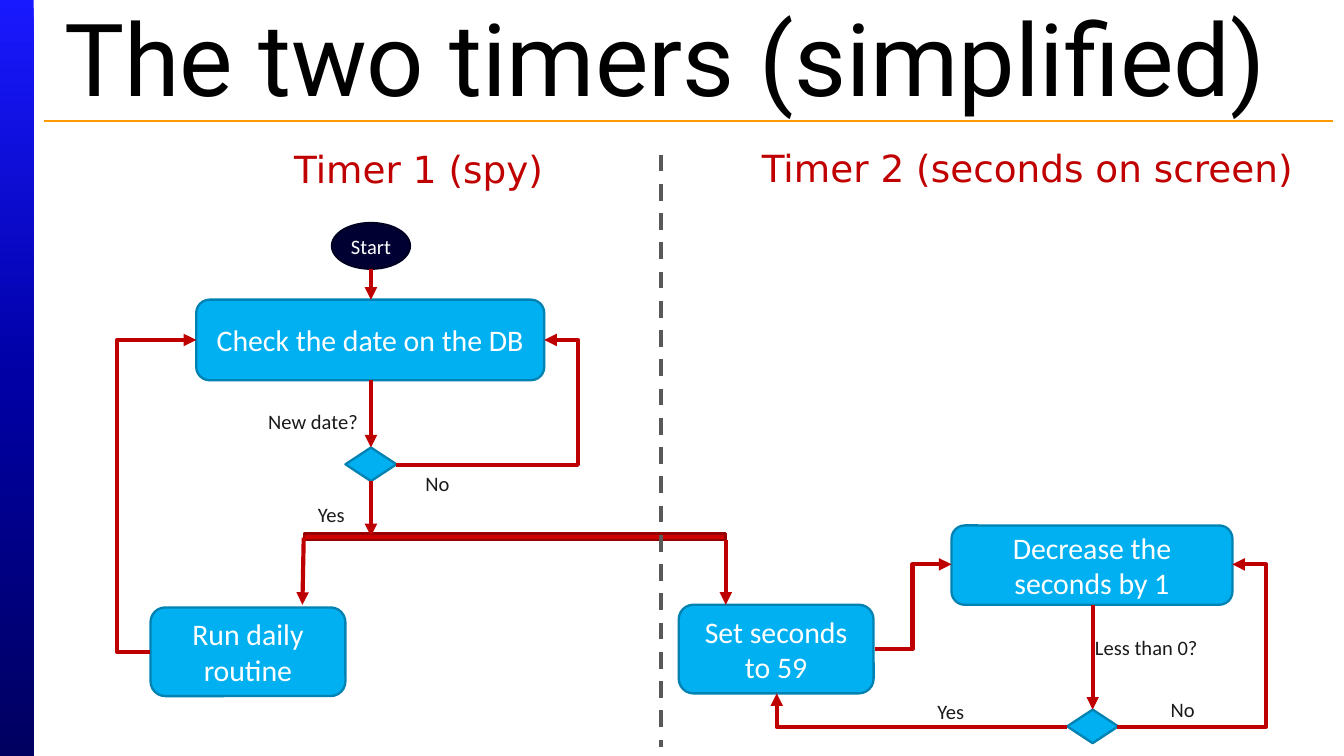
from dataclasses import dataclass
from typing import Optional

from lxml.etree import SubElement
from pptx import Presentation
from pptx.dml.color import RGBColor
from pptx.enum.dml import MSO_LINE
from pptx.enum.shapes import MSO_CONNECTOR, MSO_SHAPE
from pptx.enum.text import MSO_ANCHOR, PP_ALIGN
from pptx.oxml.ns import qn
from pptx.util import Inches, Pt

SLIDE_W = 10
SLIDE_H = SLIDE_W * 9 / 16


@dataclass(frozen=True)
class Theme:
    step_fill: str = "00B0F0"
    step_line: str = "0082B2"
    start_fill: str = "000032"
    start_line: str = "000025"
    bar_fill: str = "CC0000"
    bar_line: str = "970000"
    arrow: str = "BF0000"
    heading: str = "C00000"
    divider: str = "595959"
    rule: str = "FF9900"
    label: str = "1A1A1A"
    black: str = "000000"
    white: str = "FFFFFF"
    band: tuple = (("1919FF", 0), ("0000A5", 0.5), ("000060", 1))
    title_font: str = "Roboto"
    heading_font: str = "DejaVu Sans"
    body_font: str = "Calibri"
    title_size: float = 54
    heading_size: float = 20
    step_size: float = 16
    label_size: float = 11
    outline: float = 1.25
    stroke: float = 2.25


@dataclass(frozen=True)
class Box:
    x: float
    y: float
    w: float
    h: float

    @property
    def inches(self) -> tuple:
        return tuple(Inches(v) for v in (self.x, self.y, self.w, self.h))


@dataclass(frozen=True)
class Node:
    box: Box
    kind: MSO_SHAPE
    text: str = ""
    fill: str = Theme.step_fill
    line: str = Theme.step_line
    size: float = Theme.step_size
    inset: Optional[float] = None


@dataclass(frozen=True)
class Label:
    text: str
    box: Box
    filled: bool = True


@dataclass(frozen=True)
class Arrow:
    """Straight, bent through the column turn_x, or with a single corner."""
    start: tuple
    end: tuple
    turn_x: Optional[float] = None
    corner: bool = False


T = Theme()
STEP, CHOICE = MSO_SHAPE.ROUNDED_RECTANGLE, MSO_SHAPE.DIAMOND

NODES = [
    Node(Box(2.47, 1.66, 0.58, 0.34), MSO_SHAPE.OVAL, "Start",
         T.start_fill, T.start_line, T.label_size, 0),
    Node(Box(1.46, 2.23, 2.59, 0.6), STEP, "Check the date on the DB"),
    Node(Box(2.57, 3.33, 0.38, 0.25), CHOICE),
    Node(Box(2.26, 3.97, 3.14, 0.05), MSO_SHAPE.RECTANGLE, "", T.bar_fill, T.bar_line),
    Node(Box(1.12, 4.52, 1.45, 0.66), STEP, "Run daily routine"),
    Node(Box(5.05, 4.5, 1.45, 0.66), STEP, "Set seconds to 59"),
    Node(Box(7.08, 3.91, 2.09, 0.59), STEP, "Decrease the seconds by 1"),
    Node(Box(7.94, 5.28, 0.38, 0.25), CHOICE),
]
LABELS = [
    Label("New date?", Box(1.8, 3.04, 1.06, 0.19)),
    Label("No", Box(3.02, 3.5, 0.47, 0.19)),
    Label("Yes", Box(2.23, 3.73, 0.47, 0.19)),
    Label("No", Box(8.57, 5.18, 0.46, 0.19)),
    Label("Less than 0?", Box(8, 4.72, 1.06, 0.19), False),
    Label("Yes", Box(6.84, 5.2, 0.47, 0.19), False),
]
ARROWS = [
    Arrow((2.76, 2), (2.76, 2.23)),
    Arrow((2.76, 2.83), (2.76, 3.33)),
    Arrow((2.76, 3.58), (2.76, 3.99)),
    Arrow((2.26, 4), (2.25, 4.5)),
    Arrow((5.4, 4.02), (5.4, 4.5)),
    Arrow((8.13, 4.5), (8.13, 5.28)),
    Arrow((2.95, 3.46), (4.05, 2.53), turn_x=4.3),
    Arrow((1.12, 4.85), (1.46, 2.53), turn_x=0.87),
    Arrow((6.51, 4.83), (7.08, 4.2), turn_x=6.79),
    Arrow((8.31, 5.41), (9.17, 4.2), turn_x=9.42),
    Arrow((7.94, 5.41), (5.78, 5.16), corner=True),
]


def rgb(value: str) -> RGBColor:
    return RGBColor.from_string(value)


def set_text(sp, text: str, font: str, size: float, color: str,
             align=PP_ALIGN.CENTER, anchor=MSO_ANCHOR.MIDDLE,
             inset: Optional[float] = None, wrap: bool = True) -> None:
    tf = sp.text_frame
    tf.word_wrap = wrap
    tf.vertical_anchor = anchor
    if inset is not None:
        tf.margin_left = tf.margin_right = tf.margin_top = tf.margin_bottom = Inches(inset)
    p = tf.paragraphs[0]
    p.text, p.alignment = text, align
    p.font.name, p.font.size, p.font.color.rgb = font, Pt(size), rgb(color)


def add_band(s, box: Box) -> None:
    sp = s.shapes.add_shape(MSO_SHAPE.RECTANGLE, *box.inches)
    sp.shadow.inherit = False
    sp.line.fill.background()
    sp.fill.gradient()
    sp.fill.gradient_angle = 270
    stops = sp.fill._fill._gradFill.find(qn("a:gsLst"))
    for stop in list(stops):
        stops.remove(stop)
    for color, position in T.band:
        stop = SubElement(stops, qn("a:gs"), pos=str(int(position * 100000)))
        SubElement(stop, qn("a:srgbClr"), val=color)


def add_node(s, node: Node) -> None:
    sp = s.shapes.add_shape(node.kind, *node.box.inches)
    sp.shadow.inherit = False
    sp.fill.solid()
    sp.fill.fore_color.rgb = rgb(node.fill)
    sp.line.color.rgb, sp.line.width = rgb(node.line), Pt(T.outline)
    if node.text:
        set_text(sp, node.text, T.body_font, node.size, T.white, inset=node.inset)


def add_label(s, label: Label) -> None:
    sp = s.shapes.add_textbox(*label.box.inches)
    if label.filled:
        sp.fill.solid()
        sp.fill.fore_color.rgb = rgb(T.white)
    set_text(sp, label.text, T.body_font, T.label_size, T.label, inset=0)


def add_line(s, start: tuple, end: tuple, color: str, width: float,
             kind=MSO_CONNECTOR.STRAIGHT):
    cx = s.shapes.add_connector(kind, *(Inches(v) for v in (*start, *end)))
    cx.line.color.rgb, cx.line.width = rgb(color), Pt(width)
    SubElement(cx._element.spPr, qn("a:effectLst"))
    return cx


def add_arrow(s, arrow: Arrow) -> None:
    bent = arrow.corner or arrow.turn_x is not None
    kind = MSO_CONNECTOR.ELBOW if bent else MSO_CONNECTOR.STRAIGHT
    cx = add_line(s, arrow.start, arrow.end, T.arrow, T.stroke, kind)
    SubElement(cx.line._get_or_add_ln(), qn("a:tailEnd"), type="triangle")
    geometry = cx._element.spPr.find(qn("a:prstGeom"))
    if arrow.corner:
        geometry.set("prst", "bentConnector2")
    elif bent:
        x1, x2 = arrow.start[0], arrow.end[0]
        ratio = round((arrow.turn_x - x1) / (x2 - x1) * 100000)
        SubElement(geometry.find(qn("a:avLst")), qn("a:gd"),
                   name="adj1", fmla=f"val {ratio}")


def add_heading(s, text: str, box: Box) -> None:
    set_text(s.shapes.add_textbox(*box.inches), text, T.heading_font, T.heading_size,
             T.heading, PP_ALIGN.LEFT, MSO_ANCHOR.TOP, wrap=False)


def main() -> None:
    prs = Presentation()
    prs.slide_width, prs.slide_height = Inches(SLIDE_W), Inches(SLIDE_H)
    s = prs.slides.add_slide(prs.slide_layouts[6])
    add_band(s, Box(0, 0, 0.25, SLIDE_H))
    add_line(s, (0.33, 0.9), (9.92, 0.9), T.rule, 0.75)
    set_text(s.shapes.add_textbox(*Box(0.38, 0.15, 9.58, 0.53).inches),
             "The two timers (simplified)", T.title_font, T.title_size, T.black, PP_ALIGN.LEFT)
    for label in LABELS:
        add_label(s, label)
    for node in NODES:
        add_node(s, node)
    for arrow in ARROWS:
        add_arrow(s, arrow)
    divider = add_line(s, (4.92, 1.15), (4.92, 5.56), T.divider, T.stroke)
    divider.line.dash_style = MSO_LINE.DASH
    add_heading(s, "Timer 1 (spy)", Box(2.09, 1.04, 2.13, 0.44))
    add_heading(s, "Timer 2 (seconds on screen)", Box(5.57, 1.03, 4.23, 0.44))
    prs.save("out.pptx")


if __name__ == "__main__":
    main()
